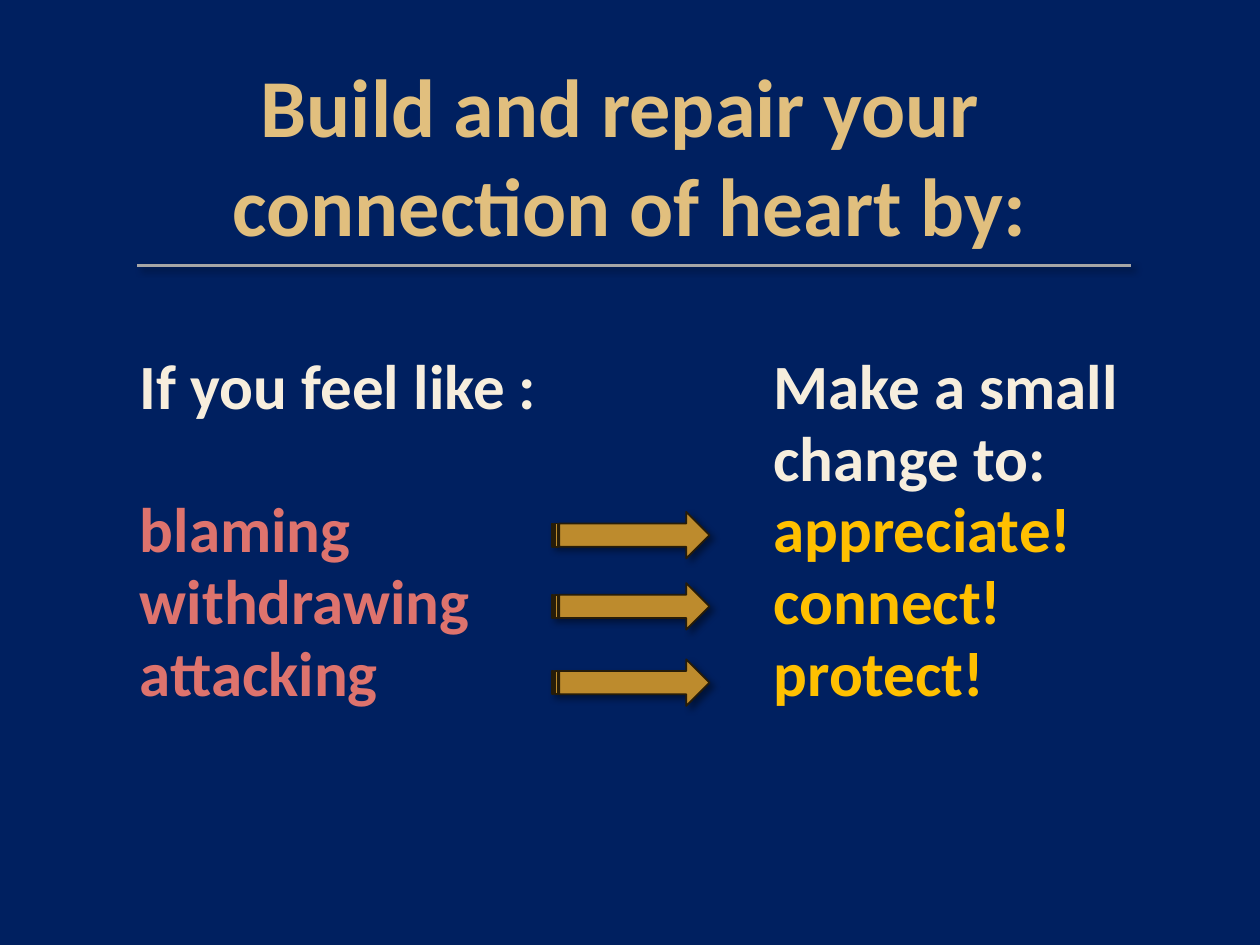
import pptx
import pptx.util
import pptx.dml.color
import pptx.enum.shapes
import pptx.enum.text
import pptx.oxml
import pptx.oxml.ns

Pt = pptx.util.Pt
SHADOW = (
    '<a:effectLst %s><a:outerShdw blurRad="50800" dist="38100" dir="2700000">'
    '<a:srgbClr val="000000"><a:alpha val="40000"/></a:srgbClr>'
    '</a:outerShdw></a:effectLst>' % pptx.oxml.ns.nsdecls("a"))


def color(code):
    return pptx.dml.color.RGBColor.from_string(code)


def shade(props):
    """Append a soft drop shadow to shape or run properties."""
    props.append(pptx.oxml.parse_xml(SHADOW))


def add_text(slide, box, lines, size, align=None, pitch=None):
    """Add a text box; each line is (text, color, space before)."""
    frame = slide.shapes.add_textbox(*map(Pt, box)).text_frame
    frame.word_wrap = True
    if pitch:
        frame.margin_left = frame.margin_right = Pt(3.6)
    for i, (text, code, gap) in enumerate(lines):
        para = frame.paragraphs[0] if i == 0 else frame.add_paragraph()
        para.alignment = align
        para.space_before = Pt(gap)
        if pitch:
            para.line_spacing = Pt(pitch)
        para.font.name = "Calibri"
        para.font.size = Pt(size)
        para.font.bold = True
        para.font.color.rgb = color(code)
        run = para.add_run()
        run.text = text
        shade(run._r.get_or_add_rPr())


def add_rule(slide, left, right, top):
    rule = slide.shapes.add_connector(
        pptx.enum.shapes.MSO_CONNECTOR.STRAIGHT,
        Pt(left), Pt(top), Pt(right), Pt(top))
    rule.line.color.rgb = color("A6A6A6")
    rule.line.width = Pt(1.75)
    shade(rule._element.spPr)


def add_arrow(slide, top):
    arrow = slide.shapes.add_shape(
        pptx.enum.shapes.MSO_SHAPE.STRIPED_RIGHT_ARROW,
        Pt(315.4), Pt(top), Pt(90), Pt(26.6))
    arrow.fill.solid()
    arrow.fill.fore_color.rgb = color("BD8B2D")
    arrow.line.color.rgb = color("261C09")
    arrow.line.width = Pt(1)
    shade(arrow._element.spPr)


def main():
    deck = pptx.Presentation()
    deck.slide_width, deck.slide_height = Pt(720), Pt(540)
    slide = deck.slides.add_slide(deck.slide_layouts[6])
    slide.background.fill.solid()
    slide.background.fill.fore_color.rgb = color("002060")

    # Title and rule
    gold, cream, red, yellow = "E1BF7E", "F7EEDD", "DE736D", "FFC000"
    add_text(slide, (0, 28, 720, 140.4),
             [("Build and repair your ", gold, 0),
              ("connection of heart by:", gold, 0)],
             47, align=pptx.enum.text.PP_ALIGN.CENTER)
    add_rule(slide, 78.5, 646.5, 151.9)

    # Feelings; the first one skips a line to match the right column
    pitch = 41
    add_text(slide, (76.3, 196.6, 289.4, 275.8),
             [("If you feel like :", cream, 0),
              ("blaming", red, pitch),
              ("withdrawing", red, 0),
              ("attacking", red, 0)], 36, pitch=pitch)

    # Changes
    add_text(slide, (438.5, 196.6, 231.1, 257.8),
             [("Make a small", cream, 0),
              ("change to:", cream, 0),
              ("appreciate!", yellow, 0),
              ("connect!", yellow, 0),
              ("protect!", yellow, 0)], 36, pitch=pitch)

    # Arrows from feeling to change
    for top in (292.5, 333.2, 376.8):
        add_arrow(slide, top)

    deck.save("out.pptx")


if __name__ == "__main__":
    main()
